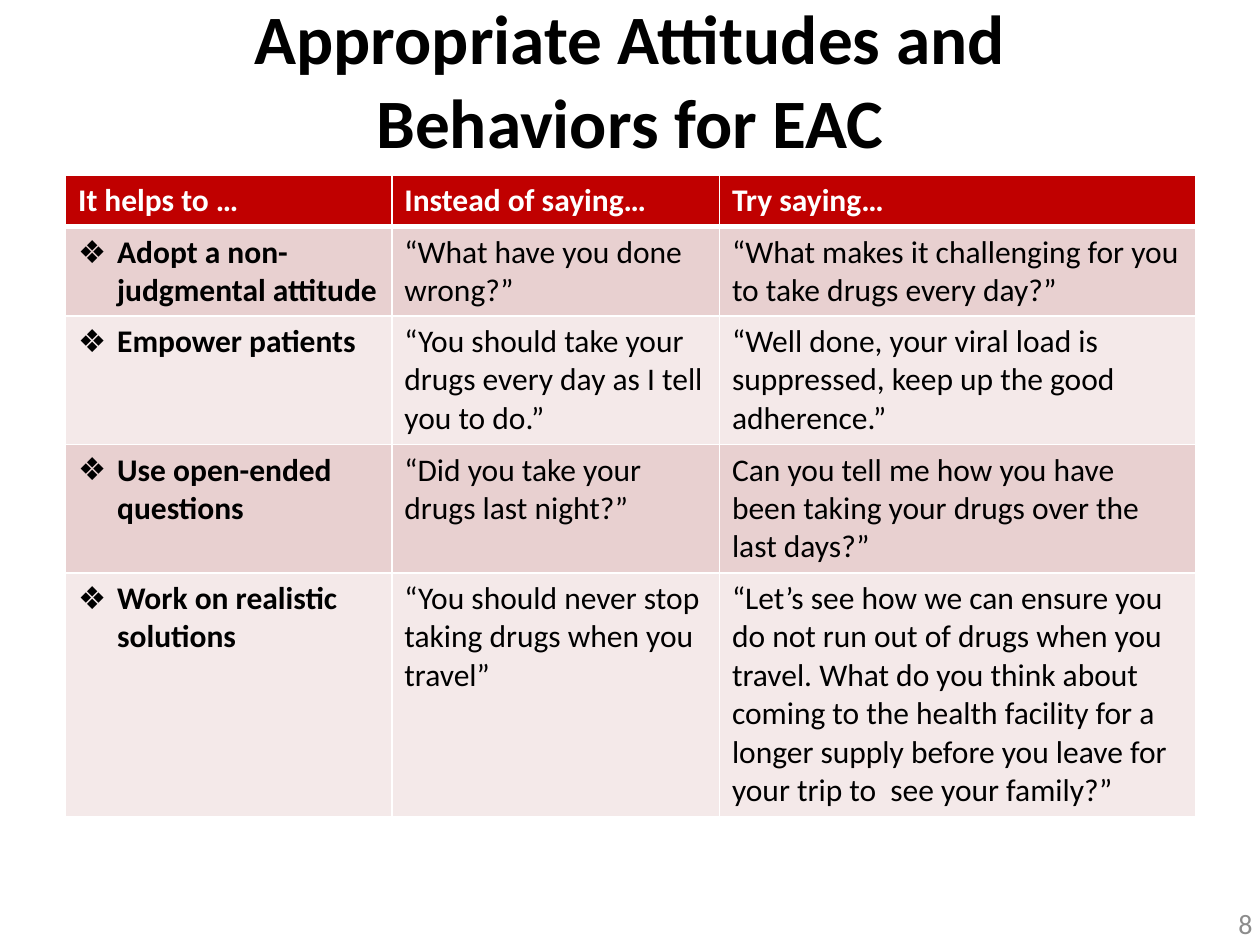
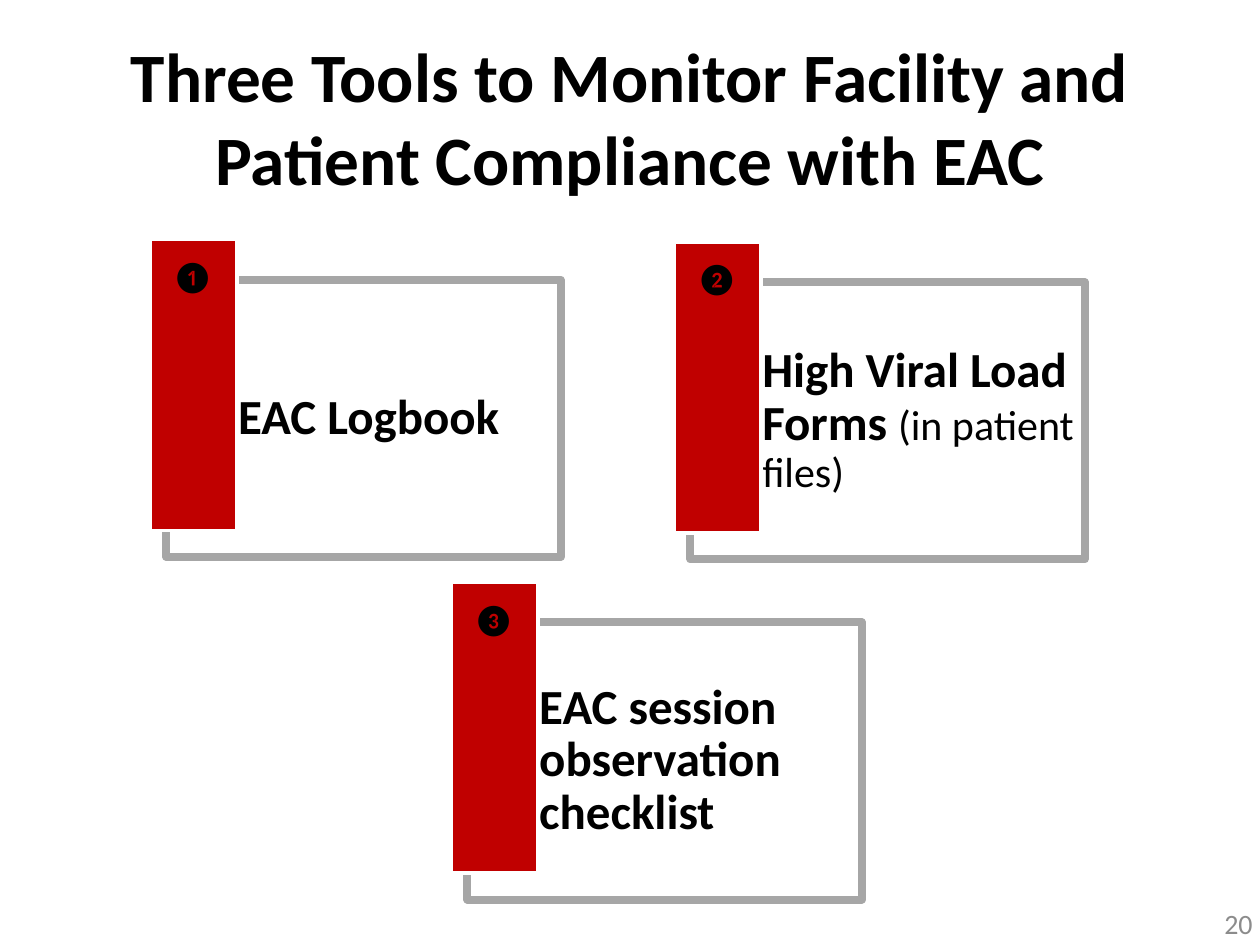
from dataclasses import dataclass

from lxml import etree
from pptx import Presentation
from pptx.dml.color import RGBColor as RGB
from pptx.enum.shapes import MSO_SHAPE as SHAPE
from pptx.enum.text import MSO_ANCHOR as ANCHOR, MSO_AUTO_SIZE as AUTO, PP_ALIGN as ALIGN
from pptx.oxml import parse_xml
from pptx.oxml.ns import nsdecls, qn
from pptx.util import Inches, Pt


@dataclass(frozen=True)
class Theme:
    font: str = "Calibri"
    white: str = "FFFFFF"
    black: str = "000000"
    red: str = "C00000"
    grey: str = "A6A6A6"
    page_grey: str = "8C8C8C"
    bands: tuple = ("E8D0D0", "F4E9E9")
    title_size: float = 39.6
    table_size: float = 18
    page_size: float = 16
    card_size: float = 28
    note_size: float = 24
    badge_size: float = 18


THEME = Theme()

HEADINGS = ("It helps to …", "Instead of saying…", "Try saying…")
ADVICE = (
    ("Adopt a non-judgmental attitude",
     "“What have you done wrong?”",
     "“What makes it challenging for you to take drugs every day?”"),
    ("Empower patients",
     "“You should take your drugs every day as I tell you to do.”",
     "“Well done, your viral load is suppressed, keep up the good adherence.”"),
    ("Use open-ended questions",
     "“Did you take your drugs last night?”",
     "Can you tell me how you have been taking your drugs over the last days?”"),
    ("Work on realistic solutions",
     "“You should never stop taking drugs when you travel”",
     "“Let’s see how we can ensure you do not run out of drugs when you travel. "
     "What do you think about coming to the health facility for a longer supply "
     "before you leave for your trip to  see your family?”"),
)
COLUMN_WIDTHS = (2.59, 2.6, 3.78)
ROW_HEIGHTS = (0.41, 0.71, 1.02, 1.02, 1.93)

# Left and top of each card, badge, name, note
TOOLS = (
    (1.19, 1.9, "❶", "EAC Logbook", ""),
    (5.35, 1.92, "❷", "High Viral Load Forms ", "(in patient files)"),
    (3.58, 4.62, "❸", "EAC session observation checklist", ""),
)


# Shared helpers
def set_font(font, size, color, bold=False):
    font.name, font.size, font.bold = THEME.font, Pt(size), bold
    font.color.rgb = RGB.from_string(color)


def add_label(slide, box, text, size, color, align, anchor=ANCHOR.TOP):
    tf = slide.shapes.add_textbox(*map(Inches, box)).text_frame
    tf.word_wrap, tf.vertical_anchor = True, anchor
    p = tf.paragraphs[0]
    p.text, p.alignment = text, align
    set_font(p.font, size, color)


def add_box(slide, box, fill, line, width):
    sp = slide.shapes.add_shape(SHAPE.RECTANGLE, *map(Inches, box))
    sp.shadow.inherit = False
    sp.fill.solid()
    sp.fill.fore_color.rgb = RGB.from_string(fill)
    sp.line.color.rgb = RGB.from_string(line)
    sp.line.width = Pt(width)
    return sp


def add_slide(prs, title, title_box, number):
    slide = prs.slides.add_slide(prs.slide_layouts[5])
    sp = slide.shapes.title
    sp.left, sp.top, sp.width, sp.height = map(Inches, title_box)
    tf = sp.text_frame
    tf.auto_size, tf.vertical_anchor = AUTO.NONE, ANCHOR.MIDDLE
    p = tf.paragraphs[0]
    p.text, p.alignment = title, ALIGN.CENTER
    set_font(p.font, THEME.title_size, THEME.black, bold=True)
    add_label(slide, (7.71, 7.13, 2.33, 0.4), str(number), THEME.page_size,
              THEME.page_grey, ALIGN.RIGHT, ANCHOR.MIDDLE)
    return slide


# Advice table
def add_borders(cell, top, bottom):
    tc_pr = cell._tc.get_or_add_tcPr()
    for side, width in (("L", 1), ("R", 1), ("T", top), ("B", bottom)):
        tc_pr.append(parse_xml(
            f'<a:ln{side} {nsdecls("a")} w="{Pt(width)}"><a:solidFill>'
            f'<a:srgbClr val="{THEME.white}"/></a:solidFill></a:ln{side}>'))


def add_bullet(p):
    p_pr = p._p.get_or_add_pPr()
    p_pr.set("marL", str(Inches(0.31)))
    p_pr.set("indent", str(-Inches(0.31)))
    etree.SubElement(p_pr, qn("a:buFont"), typeface="Wingdings 2")
    etree.SubElement(p_pr, qn("a:buChar"), char="❖")
    p_pr.find(qn("a:buFont")).set("typeface", THEME.font)


def fill_cell(cell, text, row, col):
    header = row == 0
    add_borders(cell, 3 if row == 1 else 1, 3 if header else 1)
    cell.fill.solid()
    fill = THEME.red if header else THEME.bands[(row - 1) % 2]
    cell.fill.fore_color.rgb = RGB.from_string(fill)
    p = cell.text_frame.paragraphs[0]
    p.text = text
    if col == 0 and not header:
        add_bullet(p)
    set_font(p.font, THEME.table_size, THEME.white if header else THEME.black,
             bold=header or col == 0)


def add_advice_table(slide, left, top):
    rows = (HEADINGS, *ADVICE)
    size = (sum(COLUMN_WIDTHS), sum(ROW_HEIGHTS))
    table = slide.shapes.add_table(len(rows), len(HEADINGS),
                                   *map(Inches, (left, top, *size))).table
    for column, width in zip(table.columns, COLUMN_WIDTHS):
        column.width = Inches(width)
    for r, (texts, height) in enumerate(zip(rows, ROW_HEIGHTS)):
        table.rows[r].height = Inches(height)
        for c, text in enumerate(texts):
            fill_cell(table.cell(r, c), text, r, c)


# Numbered tool card: framed panel, red tab, badge
def add_tool_card(slide, left, top, badge, name, note):
    panel = add_box(slide, (left + 0.13, top + 0.32, 3.13, 2.2),
                    THEME.white, THEME.grey, 4.5)
    color = panel.fill._xPr.find(qn("a:solidFill"))[0]
    etree.SubElement(color, qn("a:alpha"), val="40000")
    tf = panel.text_frame
    tf.word_wrap, tf.vertical_anchor = True, ANCHOR.MIDDLE
    tf.margin_left = Inches(0.57)
    tf.margin_top = tf.margin_right = tf.margin_bottom = Inches(0.07)
    p = tf.paragraphs[0]
    p.alignment, p.line_spacing = ALIGN.LEFT, 0.9
    for text, size, bold in ((name, THEME.card_size, True),
                             (note, THEME.note_size, False)):
        if text:
            r = p.add_run()
            r.text = text
            set_font(r.font, size, THEME.black, bold)

    add_box(slide, (left, top, 0.69, 2.31), THEME.red, THEME.white, 2)
    add_label(slide, (left + 0.07, top + 0.09, 0.54, 0.4), badge,
              THEME.badge_size, THEME.black, ALIGN.CENTER)


def build_attitudes_slide(prs):
    slide = add_slide(prs, "Appropriate Attitudes and Behaviors for EAC",
                      (1.38, 0, 7.24, 1.25), 8)
    add_advice_table(slide, 0.52, 1.39)


def build_tools_slide(prs):
    slide = add_slide(
        prs, "Three Tools to Monitor Facility and Patient Compliance with EAC",
        (0.5, 0.3, 9, 1.25), 20)
    for tool in TOOLS:
        add_tool_card(slide, *tool)


def main():
    prs = Presentation()
    prs.slide_width, prs.slide_height = Inches(10), Inches(7.5)
    build_attitudes_slide(prs)
    build_tools_slide(prs)
    prs.save("out.pptx")


if __name__ == "__main__":
    main()
